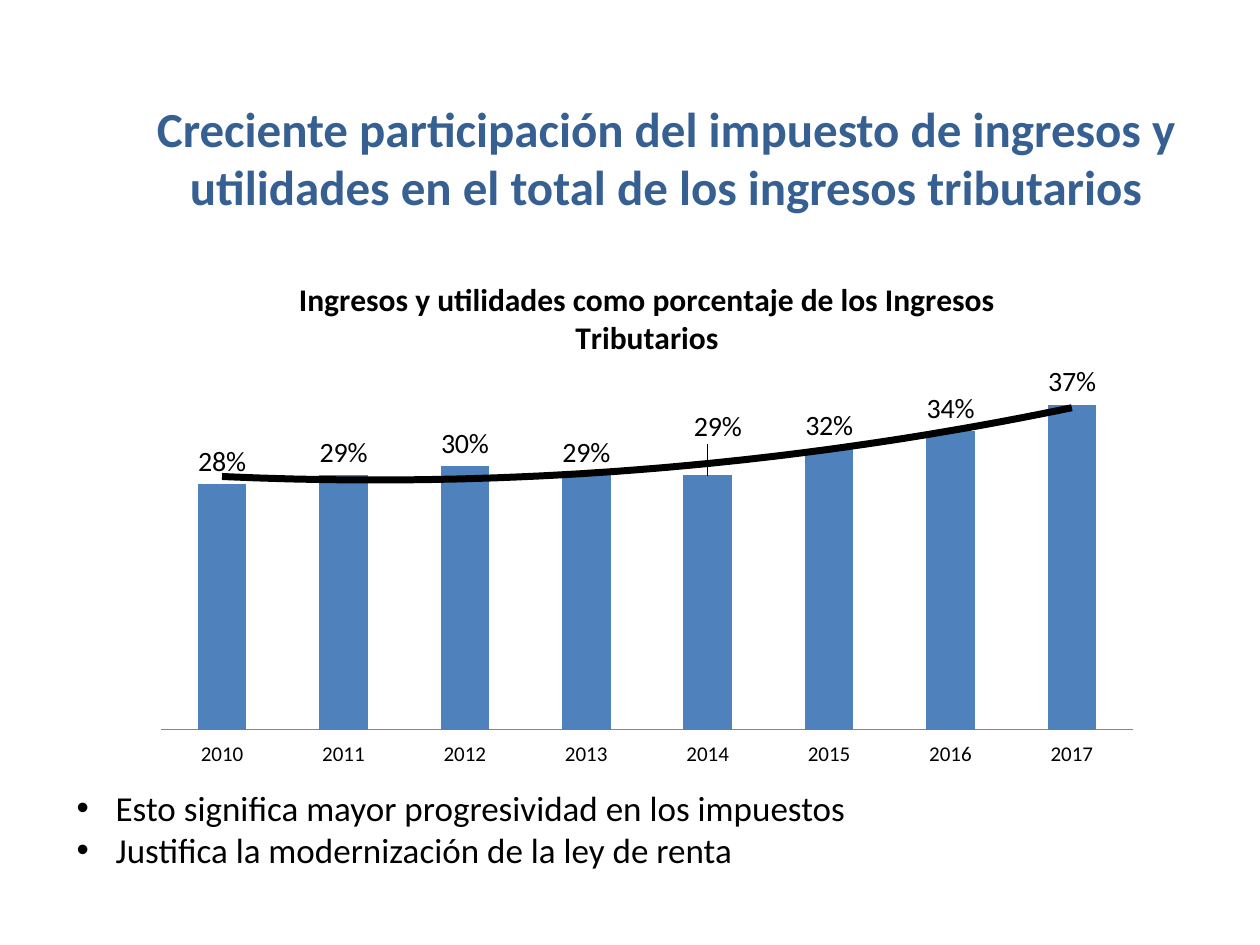
"""Build a slide on the growing share of income tax in total tax revenue."""
from lxml.etree import SubElement
from pptx import Presentation
from pptx.chart.data import CategoryChartData
from pptx.dml.color import RGBColor
from pptx.enum.chart import XL_CHART_TYPE, XL_LABEL_POSITION, XL_TICK_LABEL_POSITION, XL_TICK_MARK
from pptx.enum.text import PP_ALIGN
from pptx.oxml import parse_xml
from pptx.oxml.ns import nsdecls, qn
from pptx.util import Inches, Pt

FONT = "Calibri"
TITLE = "Creciente participación del impuesto de ingresos y utilidades en el total de los ingresos tributarios"
CHART_TITLE = "Ingresos y utilidades como porcentaje de los Ingresos Tributarios"
SHARES = {
    "2010": 0.28, "2011": 0.29, "2012": 0.30, "2013": 0.29,
    "2014": 0.29, "2015": 0.32, "2016": 0.34, "2017": 0.37,
}
SHIFTED_LABEL = list(SHARES).index("2014")
BULLETS = [
    "Esto significa mayor progresividad en los impuestos",
    "Justifica la modernización de la ley de renta",
]


def style_font(font, size, color="000000", bold=False):
    font.name = FONT
    font.size = Pt(size)
    font.bold = bold
    font.color.rgb = RGBColor.from_string(color)


def manual_layout(**parts):
    tags = "".join(f'<c:{tag} val="{value}"/>' for tag, value in parts.items())
    return parse_xml(f'<c:layout {nsdecls("c")}><c:manualLayout>{tags}</c:manualLayout></c:layout>')


def add_text(page, place, lines):
    box = page.shapes.add_textbox(*map(Inches, place))
    frame = box.text_frame
    frame.word_wrap = True
    frame.text = "\n".join(lines)
    return frame.paragraphs


def add_share_chart(page):
    data = CategoryChartData(number_format="0%")
    data.categories = list(SHARES)
    data.add_series("Ingresos y utilidades", list(SHARES.values()))
    place = map(Inches, (1.12, 2.02, 8.03, 4.1))
    chart = page.shapes.add_chart(XL_CHART_TYPE.COLUMN_CLUSTERED, *place, data).chart
    style_font(chart.font, 10)
    chart.has_legend = False
    chart.has_title = True
    heading = chart.chart_title.text_frame
    heading.text = CHART_TITLE
    style_font(heading.paragraphs[0].font, 18, bold=True)

    years = chart.category_axis
    years.major_tick_mark = XL_TICK_MARK.NONE
    years.tick_label_position = XL_TICK_LABEL_POSITION.LOW
    years.format.line.color.rgb = RGBColor.from_string("868686")
    style_font(years.tick_labels.font, 12)
    shares = chart.value_axis
    shares.minimum_scale, shares.maximum_scale = 0, 0.4
    shares.has_major_gridlines = False
    shares.visible = False

    plot = chart.plots[0]
    plot.gap_width, plot.overlap = 150, -25
    plot.vary_by_categories = False
    series = plot.series[0]
    series.format.fill.solid()
    series.format.fill.fore_color.rgb = RGBColor.from_string("4F81BD")
    labels = series.data_labels
    labels.show_value = True
    labels.number_format, labels.number_format_is_linked = "0%", False
    labels.position = XL_LABEL_POSITION.OUTSIDE_END
    style_font(labels.font, 16)
    shifted = series.points[SHIFTED_LABEL].data_label
    shifted.position = XL_LABEL_POSITION.OUTSIDE_END
    style_font(shifted.font, 16)

    root = series._element
    root.find(f'.//{qn("c:dLbl")}/{qn("c:idx")}').addnext(manual_layout(x=0.01, y=-0.05))
    root.find(qn("c:cat")).addprevious(parse_xml(
        f'<c:trendline {nsdecls("c", "a")}><c:spPr><a:ln w="50800"><a:solidFill>'
        '<a:srgbClr val="000000"/></a:solidFill></a:ln></c:spPr>'
        '<c:trendlineType val="poly"/><c:order val="2"/>'
        '<c:dispRSqr val="0"/><c:dispEq val="0"/></c:trendline>'))
    area = chart._chartSpace.chart.plotArea
    for old in area.findall(qn("c:layout")):
        area.remove(old)
    area.insert(0, manual_layout(
        layoutTarget="inner", xMode="edge", yMode="edge", x=0.02, y=0.24, w=0.96, h=0.68))


def main():
    deck = Presentation()
    deck.slide_width, deck.slide_height = Inches(10), Inches(7.5)
    page = deck.slides.add_slide(deck.slide_layouts[6])
    add_share_chart(page)
    for para in add_text(page, (1.11, 0.73, 8.35, 1.04), [TITLE]):
        para.alignment = PP_ALIGN.CENTER
        style_font(para.font, 28, "376092", bold=True)
    for para in add_text(page, (0.51, 6.19, 9.07, 0.77), BULLETS):
        properties = para._p.get_or_add_pPr()
        properties.set("marL", str(Inches(0.31)))
        properties.set("indent", str(Inches(-0.31)))
        SubElement(properties, qn("a:buFont")).set("typeface", "Arial")
        SubElement(properties, qn("a:buChar")).set("char", "•")
        style_font(para.font, 20)
    deck.save("out.pptx")


if __name__ == "__main__":
    main()
